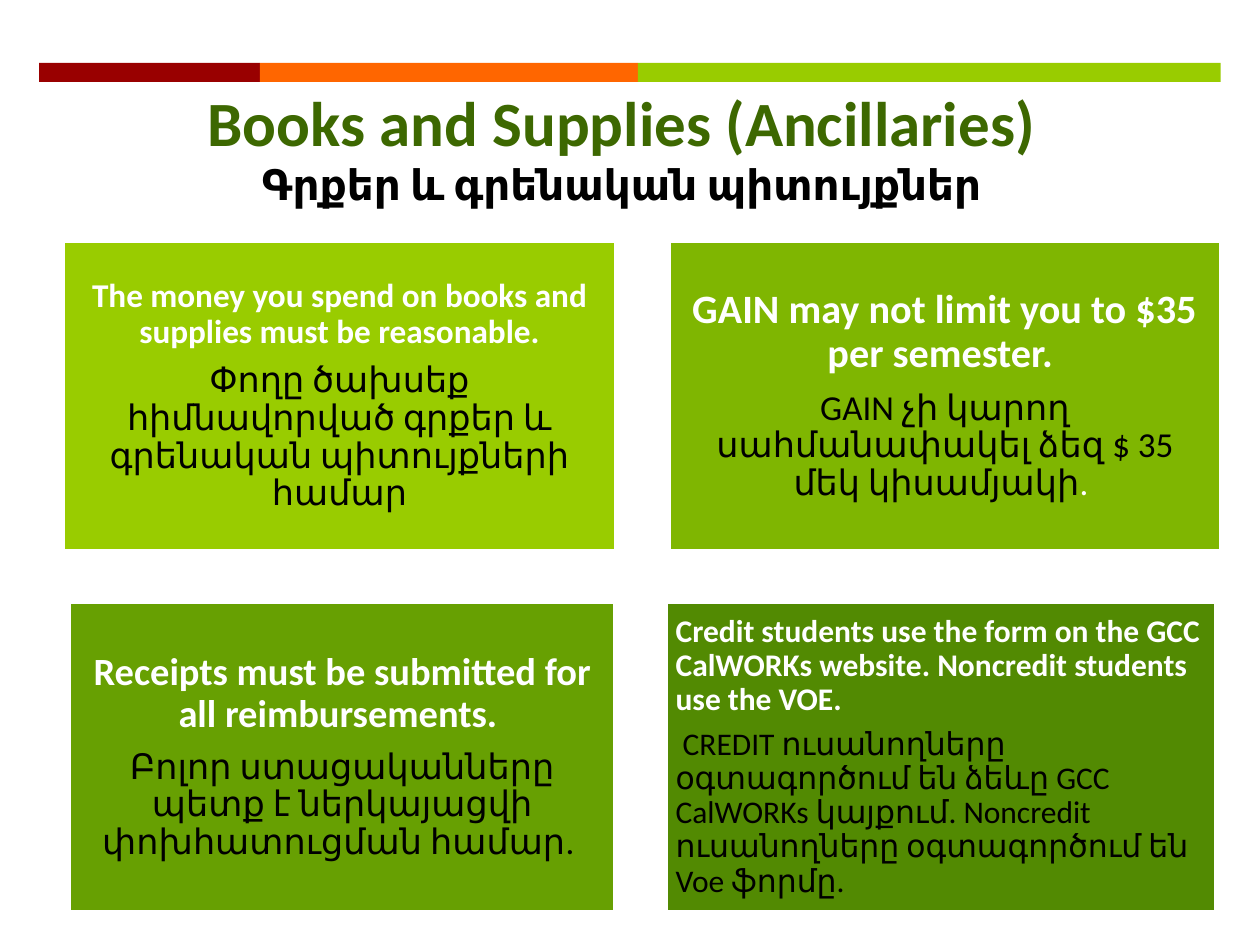
from pptx import Presentation
from pptx.dml.color import RGBColor
from pptx.enum.shapes import MSO_SHAPE
from pptx.enum.text import MSO_ANCHOR, MSO_AUTO_SIZE, PP_ALIGN
from pptx.util import Cm, Pt

RECTANGLE = MSO_SHAPE.RECTANGLE
TOP, MIDDLE = MSO_ANCHOR.TOP, MSO_ANCHOR.MIDDLE
LEFT, CENTER = PP_ALIGN.LEFT, PP_ALIGN.CENTER
NO_AUTOFIT = MSO_AUTO_SIZE.NONE
TITLE_ONLY = 5

COLORS = {
    "white": "FFFFFF", "black": "000000", "title": "3D6801",
    "red": "990000", "orange": "FF6600", "lime": "99CC00",
    "leaf": "7FB601", "grass": "67A002", "forest": "528A02",
}
BARS = [("red", 4.45), ("orange", 7.62), ("lime", 11.75)]
CARDS = [
    ("lime", (1.27, 4.86, 11.15, 6.25), 0.2, CENTER,
     (19, "The money you spend on books and supplies must be reasonable."),
     (20, [("Փողը ծախսեք հիմնավորված գրքեր և գրենական պիտույքների համար", "black")])),
    ("leaf", (13.49, 4.86, 11.12, 6.25), 0.25, CENTER,
     (23, "GAIN may not limit you to $35 per semester. "),
     (20, [("GAIN չի կարող սահմանափակել ձեզ $ 35 մեկ կիսամյակի", "black"), (". ", "white")])),
    ("grass", (1.4, 12.14, 11, 6.25), 0.23, CENTER,
     (22, "Receipts must be submitted for all reimbursements. "),
     (20, [("Բոլոր ստացականները պետք է ներկայացվի փոխհատուցման համար. ", "black")])),
    ("forest", (13.44, 12.14, 11.07, 6.25), 0.18, LEFT,
     (18, "Credit students use the form on the GCC CalWORKs website. "
          "Noncredit students use the VOE."),
     (18, [(" CREDIT ուսանողները օգտագործում են ձեևը GCC CalWORKs կայքում. "
            "Noncredit ուսանողները օգտագործում են Voe ֆորմը.", "black")])),
]


def add_run(paragraph, text, *, size, color, font, bold=False):
    """Add one formatted run to a paragraph."""
    run = paragraph.add_run()
    run.text = text
    run.font.name = font
    run.font.size = Pt(size)
    run.font.bold = bold
    run.font.color.rgb = RGBColor.from_string(COLORS[color])


class SlideBuilder:
    """Hold the style and the slide being built."""

    def __init__(self, slide, font="Calibri"):
        """Keep the slide and its font."""
        self.slide = slide
        self.font = font

    def rectangle(self, box, color, outline=None):
        """Draw a filled rectangle, with an outline colour if given."""
        shape = self.slide.shapes.add_shape(RECTANGLE, *map(Cm, box))
        shape.shadow.inherit = False
        shape.fill.solid()
        shape.fill.fore_color.rgb = RGBColor.from_string(COLORS[color])
        if outline:
            shape.line.color.rgb = RGBColor.from_string(COLORS[outline])
            shape.line.width = Pt(2)
        else:
            shape.line.fill.background()
        return shape

    def header_bar(self, left, top, height):
        """Draw the coloured segments end to end."""
        for color, width in BARS:
            self.rectangle((left, top, width, height), color)
            left += width

    def title(self, box, lines):
        """Fill the title placeholder with centred bold lines."""
        shape = self.slide.shapes.title
        shape.left, shape.top, shape.width, shape.height = map(Cm, box)
        frame = shape.text_frame
        frame.auto_size = NO_AUTOFIT
        frame.word_wrap = True
        frame.vertical_anchor = TOP
        for index, (text, size, color) in enumerate(lines):
            paragraph = frame.add_paragraph() if index else frame.paragraphs[0]
            paragraph.alignment = CENTER
            paragraph.space_before = Pt(0)
            paragraph.line_spacing = 1.0
            add_run(paragraph, text, size=size, color=color, font=self.font, bold=True)

    def card(self, color, box, margin, alignment, heading, translation):
        """Draw a card with a bold heading above its translation."""
        frame = self.rectangle(box, color, outline="white").text_frame
        frame.word_wrap = True
        frame.vertical_anchor = MIDDLE
        frame.margin_left = frame.margin_right = Cm(margin)
        frame.margin_top = frame.margin_bottom = Cm(margin)
        heading_size, heading_text = heading
        translation_size, translation_runs = translation
        rows = [
            (frame.paragraphs[0], heading_size, [(heading_text, "white")], True),
            (frame.add_paragraph(), translation_size, translation_runs, False),
        ]
        for paragraph, size, runs, bold in rows:
            paragraph.alignment = alignment
            paragraph.line_spacing = 0.9
            paragraph.space_after = Pt(0.35 * size)
            for text, run_color in runs:
                add_run(paragraph, text, size=size, color=run_color,
                        font=self.font, bold=bold)


def main():
    """Build and save the presentation."""
    presentation = Presentation()
    presentation.slide_width, presentation.slide_height = Cm(25.4), Cm(19.05)
    layout = presentation.slide_layouts[TITLE_ONLY]
    builder = SlideBuilder(presentation.slides.add_slide(layout))
    builder.header_bar(0.79, 1.27, 0.38)
    for card in CARDS:
        builder.card(*card)
    builder.title((0.89, 1.55, 23.29, 3.84), [
        ("Books and Supplies (Ancillaries)", 36, "title"),
        ("Գրքեր և գրենական պիտույքներ", 24, "black"),
    ])
    presentation.save("out.pptx")


if __name__ == "__main__":
    main()
